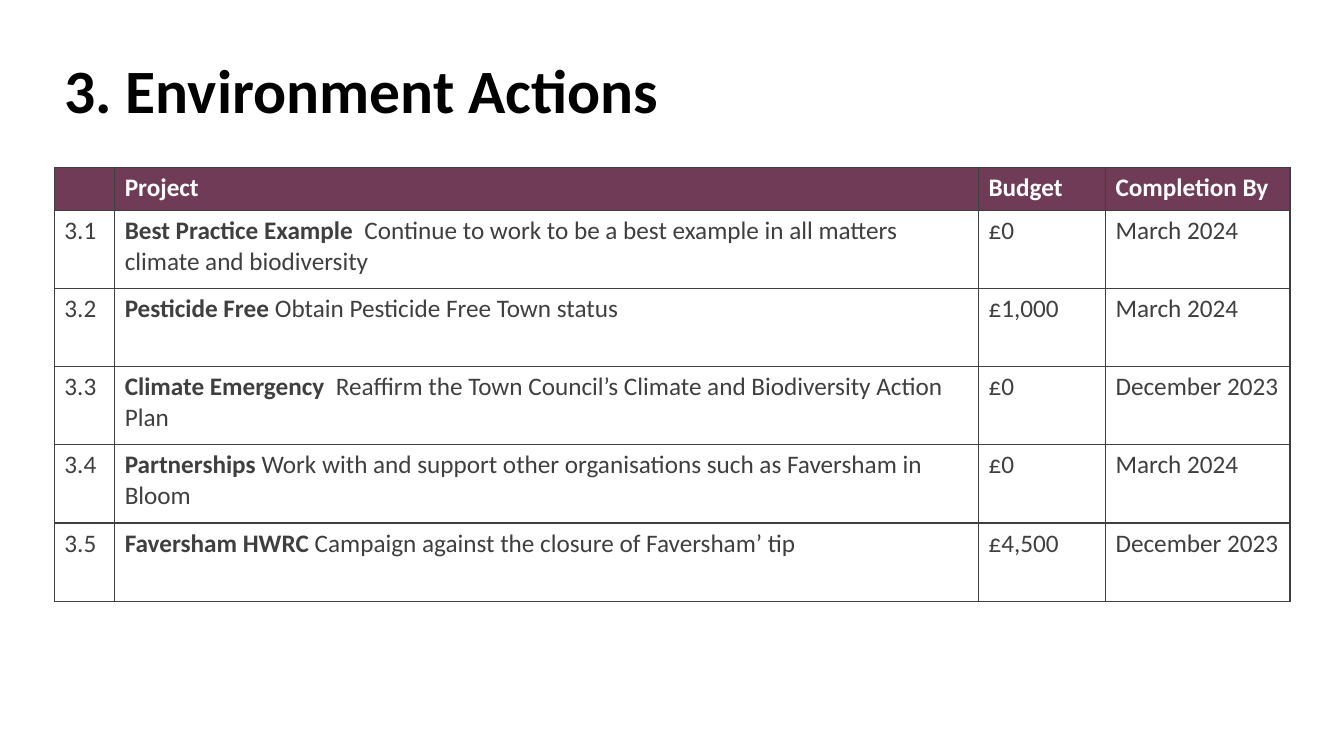
from dataclasses import dataclass

from lxml.etree import SubElement
from pptx import Presentation
from pptx.dml.color import RGBColor
from pptx.enum.text import MSO_ANCHOR
from pptx.oxml.ns import qn
from pptx.util import Cm, Pt


@dataclass(frozen=True)
class Theme:
    """Colours, font and type sizes of the slide."""
    font: str = "Calibri"
    title_size: int = 44
    table_size: int = 18
    border_width: int = 1
    black: str = "000000"
    white: str = "FFFFFF"
    plum: str = "703B56"
    charcoal: str = "3F3F3F"


THEME = Theme()
COLUMN_WIDTHS = (1.52, 21.77, 3.2, 4.65)
HEADER_HEIGHT = 1.08
ACTION_HEIGHT = 1.97
HEADINGS = ("", "Project", "Budget", "Completion By")
ACTIONS = (
    ("3.1", ("Best Practice Example  ",
             "Continue to work to be a best example in all matters climate and biodiversity"),
     "£0", "March 2024"),
    ("3.2", ("Pesticide Free ", "Obtain Pesticide Free Town status"),
     "£1,000", "March 2024"),
    ("3.3", ("Climate Emergency ",
             " Reaffirm the Town Council’s Climate and Biodiversity Action Plan"),
     "£0", "December 2023"),
    ("3.4", ("Partnerships ",
             "Work with and support other organisations such as Faversham in Bloom"),
     "£0", "March 2024"),
    ("3.5", ("Faversham HWRC ", "Campaign against the closure of Faversham’ tip"),
     "£4,500", "December 2023"),
)


def style_font(font, size, color, bold):
    """Apply the theme font with the given size, colour and weight."""
    font.name = THEME.font
    font.size = Pt(size)
    font.bold = bold
    font.color.rgb = RGBColor.from_string(color)


def add_borders(cell):
    """Draw a thin solid line on all four sides of a cell."""
    properties = cell._tc.get_or_add_tcPr()
    for position, side in enumerate(("a:lnL", "a:lnR", "a:lnT", "a:lnB")):
        line = SubElement(properties, qn(side), w=str(Pt(THEME.border_width)))
        fill = SubElement(line, qn("a:solidFill"))
        SubElement(fill, qn("a:srgbClr"), val=THEME.charcoal)
        properties.insert(position, line)


def fill_cell(cell, content, is_heading):
    """Write a heading, a plain entry or a named project into a cell."""
    paragraph = cell.text_frame.paragraphs[0]
    color = THEME.white if is_heading else THEME.charcoal
    if isinstance(content, tuple):
        name, description = content
        paragraph.text = name
        paragraph.add_run().text = description
        weights = (True, False)
    else:
        paragraph.text = content
        weights = (is_heading,)
    for run, bold in zip(paragraph.runs, weights):
        style_font(run.font, THEME.table_size, color, bold)
    if is_heading:
        cell.fill.solid()
        cell.fill.fore_color.rgb = RGBColor.from_string(THEME.plum)
    else:
        cell.fill.background()
    add_borders(cell)


def add_title(slide, left, top, width, height):
    """Place the slide title, centred vertically in its box."""
    title = slide.shapes.add_textbox(Cm(left), Cm(top), Cm(width), Cm(height))
    frame = title.text_frame
    frame.word_wrap = True
    frame.vertical_anchor = MSO_ANCHOR.MIDDLE
    frame.text = "3. Environment Actions"
    heading = frame.paragraphs[0]
    heading.line_spacing = 0.9
    style_font(heading.runs[0].font, THEME.title_size, THEME.black, True)


def add_actions_table(slide, left, top):
    """Place the table of actions with its top left corner at the given point."""
    heights = [HEADER_HEIGHT] + [ACTION_HEIGHT] * len(ACTIONS)
    table = slide.shapes.add_table(
        len(heights), len(COLUMN_WIDTHS), Cm(left), Cm(top),
        Cm(sum(COLUMN_WIDTHS)), Cm(sum(heights))).table
    table.horz_banding = False
    for column, width in zip(table.columns, COLUMN_WIDTHS):
        column.width = Cm(width)
    for row, height, entries in zip(table.rows, heights, (HEADINGS, *ACTIONS)):
        row.height = Cm(height)
        for cell, content in zip(row.cells, entries):
            fill_cell(cell, content, entries is HEADINGS)


def main():
    """Build and save the slide."""
    presentation = Presentation()
    presentation.slide_width = Cm(33.87)
    presentation.slide_height = Cm(19.05)
    slide = presentation.slides.add_slide(presentation.slide_layouts[6])
    add_title(slide, 1.37, 0.53, 30.18, 3.68)
    add_actions_table(slide, 1.37, 4.22)
    presentation.save("out.pptx")


if __name__ == "__main__":
    main()
